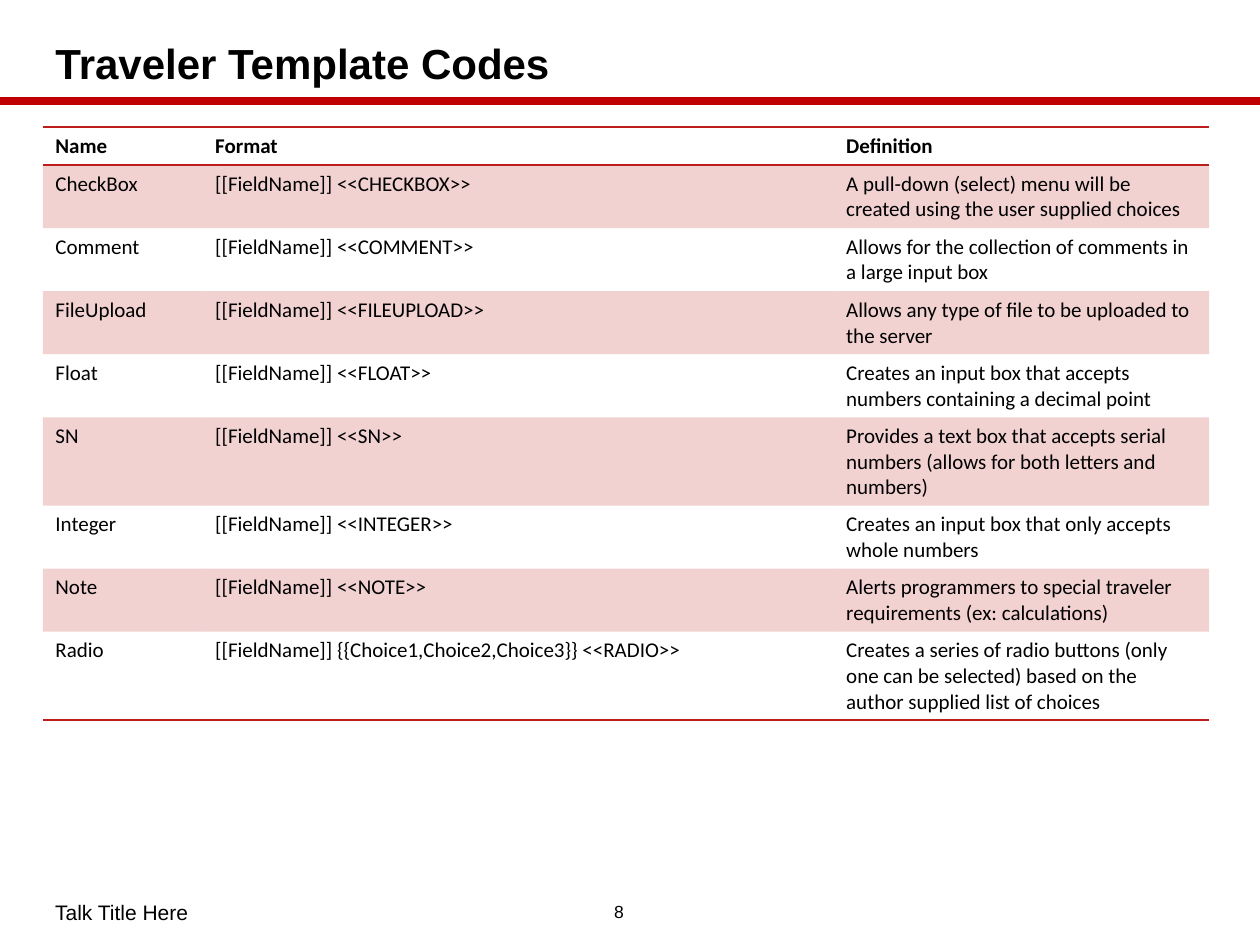
import pptx
import pptx.util
from lxml import etree
from pptx.dml.color import RGBColor
from pptx.enum.shapes import MSO_CONNECTOR
from pptx.enum.text import MSO_ANCHOR, PP_ALIGN
from pptx.oxml.ns import qn

Pt = pptx.util.Pt

BLACK = RGBColor(0x00, 0x00, 0x00)
RULE_RED = RGBColor(0xC0, 0x00, 0x00)
TABLE_RED = RGBColor(0xBE, 0x1D, 0x1D)
BAND_OPACITY = 20
NO_STYLE_NO_GRID = "{2D5ABB26-0587-4C30-8999-92F81FD0307C}"

TITLE = "Traveler Template Codes"
FOOTER = "Talk Title Here"
PAGE_NUMBER = "8"
HEADINGS = ("Name", "Format", "Definition")
CODES = [
    ("CheckBox", "[[FieldName]] <<CHECKBOX>>",
     "A pull-down (select) menu will be created using the user supplied choices"),
    ("Comment", "[[FieldName]] <<COMMENT>>",
     "Allows for the collection of comments in a large input box"),
    ("FileUpload", "[[FieldName]] <<FILEUPLOAD>>",
     "Allows any type of file to be uploaded to the server"),
    ("Float", "[[FieldName]] <<FLOAT>>",
     "Creates an input box that accepts numbers containing a decimal point"),
    ("SN", "[[FieldName]] <<SN>>",
     "Provides a text box that accepts serial numbers (allows for both letters and numbers)"),
    ("Integer", "[[FieldName]] <<INTEGER>>",
     "Creates an input box that only accepts whole numbers"),
    ("Note", "[[FieldName]] <<NOTE>>",
     "Alerts programmers to special traveler requirements (ex: calculations)"),
    ("Radio", "[[FieldName]] {{Choice1,Choice2,Choice3}} <<RADIO>>",
     "Creates a series of radio buttons (only one can be selected) "
     "based on the author supplied list of choices"),
]

SLIDE_WIDTH, SLIDE_HEIGHT = 720, 540
LEFT = 24.5
CONTENT_WIDTH = 666.5
RULE_Y = 57.6
TABLE_TOP = 72.7
COLUMN_WIDTHS = (91.3, 360.6, 214.6)
ROW_HEIGHT = 18.7
FOOTER_TOP = 509
FOOTER_WIDTH = 308
NUMBER_WIDTH = 42.5


def write(frame, text, size, font="Arial", bold=False, align=PP_ALIGN.LEFT,
          anchor=MSO_ANCHOR.MIDDLE, line_spacing=None):
    frame.word_wrap = True
    frame.vertical_anchor = anchor
    paragraph = frame.paragraphs[0]
    paragraph.alignment = align
    paragraph.line_spacing = line_spacing
    run = paragraph.add_run()
    run.text = text
    run.font.name = font
    run.font.size = Pt(size)
    run.font.bold = bold
    run.font.color.rgb = BLACK


def add_border(cell, side):
    """Draw a 1 pt red border; side is lnT or lnB, top before bottom."""
    border = etree.SubElement(cell._tc.get_or_add_tcPr(), qn(f"a:{side}"), w=str(Pt(1)))
    fill = etree.SubElement(border, qn("a:solidFill"))
    etree.SubElement(fill, qn("a:srgbClr"), val=str(TABLE_RED))


def fill_band(cell):
    cell.fill.solid()
    cell.fill.fore_color.rgb = TABLE_RED
    color = cell._tc.tcPr.find(qn("a:solidFill")).find(qn("a:srgbClr"))
    etree.SubElement(color, qn("a:alpha"), val=str(BAND_OPACITY * 1000))


def add_rule(slide):
    rule = slide.shapes.add_connector(
        MSO_CONNECTOR.STRAIGHT, 0, Pt(RULE_Y), Pt(SLIDE_WIDTH), Pt(RULE_Y))
    rule.line.color.rgb = RULE_RED
    rule.line.width = Pt(4.5)
    etree.SubElement(rule._element.spPr, qn("a:effectLst"))


def add_title(slide):
    title = slide.shapes.title
    title.left, title.top = Pt(LEFT), Pt(18.7)
    title.width, title.height = Pt(CONTENT_WIDTH), Pt(38.2)
    write(title.text_frame, TITLE, 24, bold=True, line_spacing=0.9)


def add_footer(slide):
    for text, left, width, size, align in (
        (FOOTER, LEFT, FOOTER_WIDTH, 12, PP_ALIGN.LEFT),
        (PAGE_NUMBER, LEFT + FOOTER_WIDTH, NUMBER_WIDTH, 10, PP_ALIGN.CENTER),
    ):
        box = slide.shapes.add_textbox(Pt(left), Pt(FOOTER_TOP), Pt(width), Pt(24))
        write(box.text_frame, text, size, align=align)


def add_code_table(slide):
    rows = [HEADINGS, *CODES]
    frame = slide.shapes.add_table(
        len(rows), len(HEADINGS), Pt(LEFT), Pt(TABLE_TOP),
        Pt(CONTENT_WIDTH), Pt(ROW_HEIGHT * len(rows)))
    table = frame.table
    table._tbl.tblPr.find(qn("a:tableStyleId")).text = NO_STYLE_NO_GRID
    table.horz_banding = False
    for column, width in zip(table.columns, COLUMN_WIDTHS):
        column.width = Pt(width)
    for r, values in enumerate(rows):
        table.rows[r].height = Pt(ROW_HEIGHT)
        for c, value in enumerate(values):
            cell = table.cell(r, c)
            write(cell.text_frame, value, 12, font="Calibri", bold=r == 0,
                  anchor=MSO_ANCHOR.TOP)
            if r == 0:
                add_border(cell, "lnT")
            if r in (0, len(rows) - 1):
                add_border(cell, "lnB")
            if r % 2:
                fill_band(cell)
            else:
                cell.fill.background()


def main():
    deck = pptx.Presentation()
    deck.slide_width, deck.slide_height = Pt(SLIDE_WIDTH), Pt(SLIDE_HEIGHT)
    slide = deck.slides.add_slide(deck.slide_layouts[5])
    add_rule(slide)
    add_title(slide)
    add_footer(slide)
    add_code_table(slide)
    deck.save("out.pptx")


if __name__ == "__main__":
    main()
